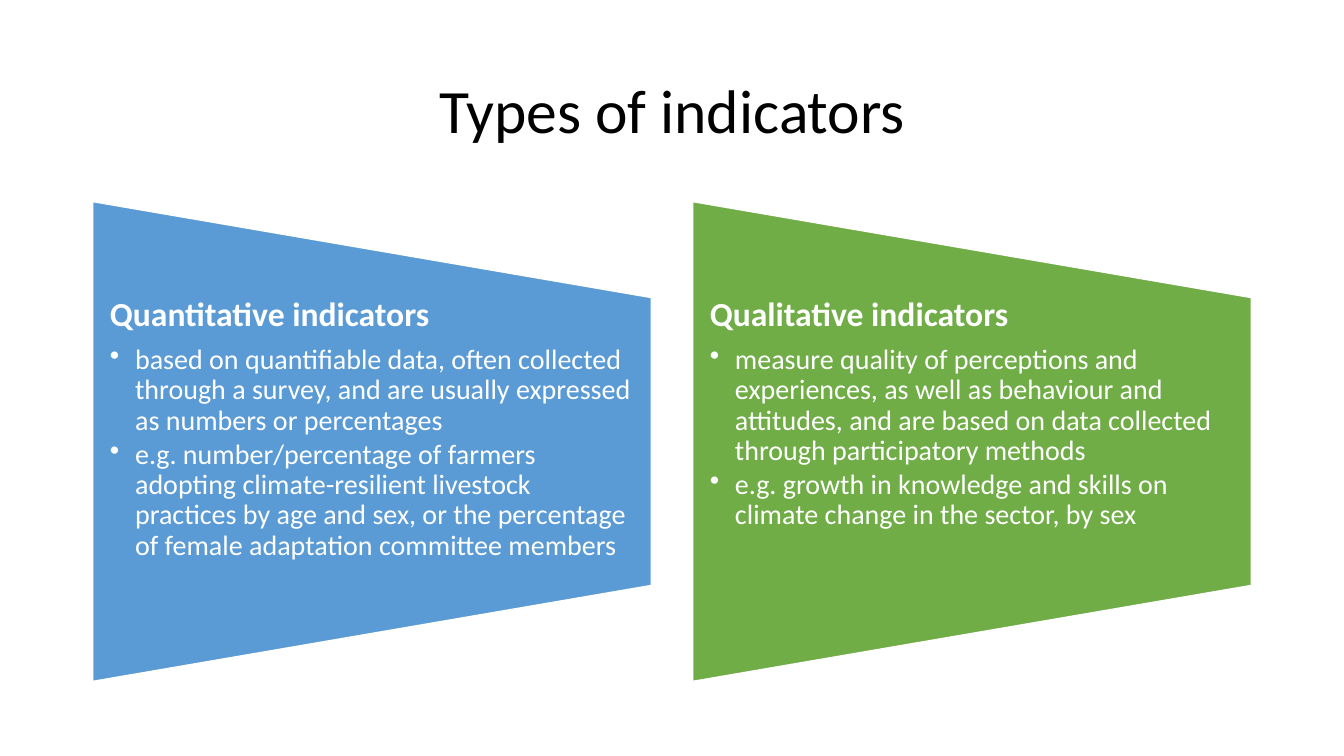
from pptx import Presentation
from pptx.dml.color import RGBColor
from pptx.enum.shapes import MSO_SHAPE
from pptx.enum.text import MSO_ANCHOR, PP_ALIGN
from pptx.util import Inches, Pt
from lxml.etree import SubElement
from pptx.oxml.ns import qn

# Content
TITLE = "Types of indicators"
PANELS = [
    ("Quantitative indicators", "blue", [
        "based on quantifiable data, often collected through a survey, "
        "and are usually expressed as numbers or percentages",
        "e.g. number/percentage of farmers adopting climate-resilient livestock "
        "practices by age and sex, or the percentage of female adaptation "
        "committee members",
    ]),
    ("Qualitative indicators", "green", [
        "measure quality of perceptions and experiences, as well as behaviour "
        "and attitudes, and are based on data collected through participatory "
        "methods",
        "e.g. growth in knowledge and skills on climate change in the sector, by sex",
    ]),
]
COLORS = {"blue": "5B9BD5", "green": "70AD47", "white": "FFFFFF", "black": "000000"}
FONT = "Calibri"

# Layout in inches
LEFT, TOP, WIDE, HIGH = 0.92, 2.0, 5.54, 4.76
STEP = 5.95
TEXT_TOP, TEXT_HIGH = 2.95, 2.86


def color(name):
    return RGBColor.from_string(COLORS[name])


def add_box(slide, left, top, wide, high, inset=0.1, anchor=MSO_ANCHOR.TOP):
    box = slide.shapes.add_textbox(Inches(left), Inches(top), Inches(wide), Inches(high))
    frame = box.text_frame
    frame.word_wrap = True
    frame.vertical_anchor = anchor
    frame.margin_left = frame.margin_right = Inches(inset)
    frame.margin_top = frame.margin_bottom = 0
    return frame


def write(frame, text, size=20, bold=False, tint="white", align=PP_ALIGN.LEFT,
          after=0, bullet=False):
    para = frame.paragraphs[0]
    if para.runs:
        para = frame.add_paragraph()
    para.alignment = align
    para.line_spacing = 0.9
    para.space_after = Pt(after)
    if bullet:
        props = para._p.get_or_add_pPr()
        props.set("marL", str(Inches(0.25)))
        props.set("indent", str(-Inches(0.25)))
        SubElement(props, qn("a:buChar")).set("char", "•")
    run = para.add_run()
    run.text = text
    run.font.name = FONT
    run.font.size = Pt(size)
    run.font.bold = bold
    run.font.color.rgb = color(tint)


def add_panel(slide, left, fill):
    # The shape turns about its centre, so its unturned sides are swapped
    shape = slide.shapes.add_shape(
        MSO_SHAPE.FLOWCHART_MANUAL_OPERATION,
        Inches(left + (WIDE - HIGH) / 2), Inches(TOP + (HIGH - WIDE) / 2),
        Inches(HIGH), Inches(WIDE))
    shape.rotation = 270
    shape.shadow.inherit = False
    shape.fill.solid()
    shape.fill.fore_color.rgb = color(fill)
    shape.line.color.rgb = color("white")
    shape.line.width = Pt(1)


def main():
    deck = Presentation()
    deck.slide_width, deck.slide_height = Inches(13.33), Inches(7.5)
    slide = deck.slides.add_slide(deck.slide_layouts[6])

    # Title
    frame = add_box(slide, LEFT, 0.4, 11.5, 1.45, anchor=MSO_ANCHOR.MIDDLE)
    write(frame, TITLE, size=44, tint="black", align=PP_ALIGN.CENTER)

    # Panels with heading and bullets
    for i, (head, fill, points) in enumerate(PANELS):
        left = LEFT + i * STEP
        add_panel(slide, left, fill)
        frame = add_box(slide, left, TEXT_TOP, WIDE, TEXT_HIGH, inset=0.17)
        write(frame, head, size=24, bold=True, after=8.4)
        for point in points:
            write(frame, point, after=3, bullet=True)

    deck.save("out.pptx")


if __name__ == "__main__":
    main()
